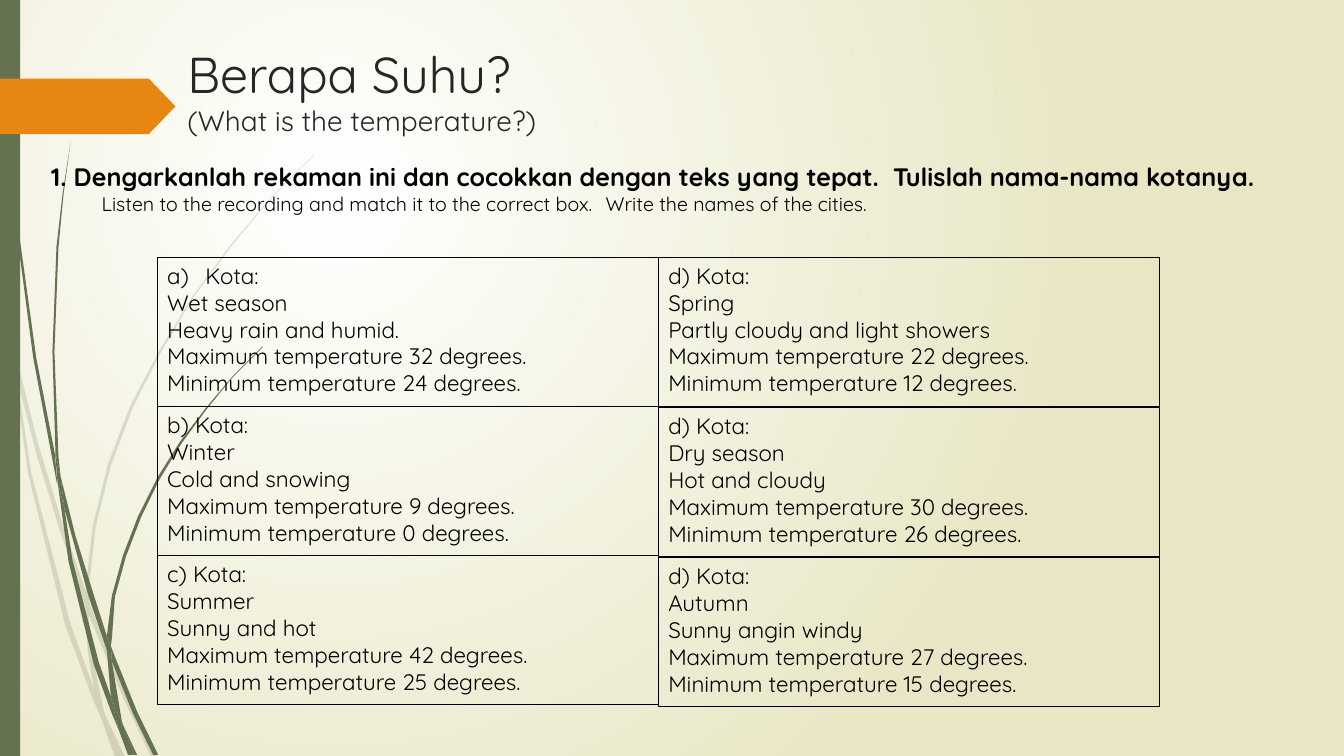
import pptx
import pptx.dml.color
import pptx.enum.shapes
import pptx.enum.text
import pptx.oxml.ns
import pptx.util
from lxml import etree

Inches = pptx.util.Inches
qn = pptx.oxml.ns.qn
SHAPES = pptx.enum.shapes.MSO_SHAPE

HUES = {"green": "647252", "orange": "E78712", "cream": "E8E6C4",
        "white": "FFFFFF", "black": "000000", "title": "262626"}

# Outlines of the pieces of grass
PALE = [
    [(0.11, 3.5), (0.09, 3.22), (0, 2.82), (0, 2.99), (0.1, 3.44)],
    [(0.58, 5.22), (0.84, 5.99), (0.85, 5.86), (0.62, 5.2), (0.36, 4.34), (0.14, 3.45),
     (0.17, 3.76), (0.36, 4.5)],
    [(0.92, 6.07), (0.88, 5.96), (0.88, 6.1), (1.23, 6.94), (1.5, 7.51), (1.55, 7.51),
     (1.27, 6.92)],
    [(1.19, 7.51), (1.24, 7.51), (1.05, 7.11)],
    [(0.93, 6.83), (0.7, 6.19), (0.31, 4.69), (0.17, 3.76), (0.11, 3.5), (0.28, 4.7),
     (0.65, 6.21), (0.92, 6.93), (1.01, 7.14), (0.99, 7.07)],
    [(0.84, 5.99), (0.87, 6.46), (0.93, 6.83), (0.96, 6.92), (1.05, 7.11), (1.03, 7.06),
     (0.91, 6.46), (0.88, 6.1), (0.88, 6.08)],
    [(0.88, 5.84), (0.95, 5.22), (1.1, 4.62), (1.32, 4.04), (1.6, 3.49), (1.92, 2.95),
     (2.29, 2.45), (2.68, 1.98), (2.9, 1.75), (3.12, 1.54), (3.12, 1.53), (2.89, 1.75),
     (2.68, 1.97), (2.28, 2.44), (1.91, 2.94), (1.58, 3.48), (1.29, 4.03), (1.07, 4.61),
     (0.92, 5.22), (0.85, 5.84), (0.85, 5.86), (0.88, 5.96)],
    [(1.01, 7.14), (1.14, 7.51), (1.19, 7.51)],
    [(0.88, 6.08), (0.88, 6.1), (0.88, 5.96), (0.85, 5.86), (0.84, 5.99)],
    [(0.96, 6.92), (0.93, 6.83), (0.99, 7.07), (1.01, 7.14), (1.19, 7.51), (1.05, 7.11)],
]
DARK = [
    [(0.07, 1.1), (0.17, 2.33), (0.33, 3.55), (0.56, 4.77), (0.57, 4.81), (0.55, 4.57),
     (0.55, 4.53), (0.36, 3.55), (0.19, 2.32), (0.08, 1.09), (0.05, 0.48), (0.04, 0),
     (0.03, 0), (0.04, 0.48)],
    [(0.88, 5.92), (1.06, 6.45), (1.06, 6.33), (1.06, 6.31), (0.93, 5.9), (0.75, 5.32),
     (0.6, 4.72), (0.64, 5.05)],
    [(1.13, 6.49), (1.1, 6.41), (1.11, 6.56), (1.32, 7.08), (1.52, 7.49), (1.57, 7.49),
     (1.36, 7.06)],
    [(1.1, 6.91), (0.98, 6.57), (0.72, 5.56), (0.64, 5.05), (0.57, 4.77), (0.68, 5.57),
     (0.93, 6.59), (1.11, 7.08), (1.17, 7.22), (1.16, 7.17)],
    [(0.6, 4.72), (0.58, 4.53), (0.54, 3.49), (0.58, 2.45), (0.63, 1.93), (0.7, 1.41),
     (0.62, 1.93), (0.56, 2.45), (0.52, 3.49), (0.55, 4.49)],
    [(1.33, 7.49), (1.36, 7.49), (1.22, 7.19)],
    [(0.57, 4.77), (0.64, 5.05), (0.6, 4.72), (0.55, 4.49), (0.55, 4.53)],
    [(1.11, 6.33), (1.14, 5.92), (1.25, 5.52), (1.4, 5.13), (1.58, 4.76), (1.8, 4.4),
     (2.05, 4.06), (2.31, 3.74), (2.61, 3.44), (2.6, 3.44), (2.31, 3.73), (2.04, 4.05),
     (1.78, 4.39), (1.56, 4.74), (1.37, 5.12), (1.22, 5.51), (1.11, 5.91), (1.06, 6.31),
     (1.1, 6.41)],
    [(1.17, 7.22), (1.27, 7.49), (1.31, 7.49)],
    [(1.06, 6.45), (1.1, 6.91), (1.16, 7.06), (1.22, 7.19), (1.21, 7.16), (1.11, 6.56),
     (1.09, 6.51)],
    [(1.06, 6.45), (1.09, 6.51), (1.11, 6.56), (1.1, 6.41), (1.06, 6.31)],
    [(1.16, 7.06), (1.1, 6.91), (1.16, 7.17), (1.17, 7.22), (1.3, 7.49), (1.33, 7.49),
     (1.22, 7.19)],
]

# Weather cards: label, season, sky, highest and lowest temperature
LEFT = [("Kota:", "Wet season", "Heavy rain and humid.", 32, 24),
        ("b) Kota:", "Winter", "Cold and snowing", 9, 0),
        ("c) Kota:", "Summer", "Sunny and hot", 42, 25)]
RIGHT = [("d) Kota:", "Spring", "Partly cloudy and light showers", 22, 12),
         ("d) Kota:", "Dry season", "Hot and cloudy", 30, 26),
         ("d) Kota:", "Autumn", "Sunny angin windy", 27, 15)]


def tint(name):
    return pptx.dml.color.RGBColor.from_string(HUES[name])


def add_run(para, text, size, hue="black", bold=False):
    run = para.add_run()
    run.text = text
    look = {"name": "Quicksand", "size": pptx.util.Pt(size), "bold": bold}
    for key, value in look.items():
        setattr(run.font, key, value)
    run.font.color.rgb = tint(hue)


def set_frame(shape):
    look = {"word_wrap": True, "vertical_anchor": pptx.enum.text.MSO_ANCHOR.TOP}
    for key, value in look.items():
        setattr(shape.text_frame, key, value)
    return shape.text_frame


def add_text(slide, x, y, w, h):
    return set_frame(slide.shapes.add_textbox(*map(Inches, (x, y, w, h))))


def paint(shape, hue):
    shape.shadow.inherit = False
    shape.fill.solid()
    shape.fill.fore_color.rgb = tint(hue)
    shape.line.fill.background()


def add_form(slide, kind, x, y, w, h, hue):
    shape = slide.shapes.add_shape(kind, *map(Inches, (x, y, w, h)))
    paint(shape, hue)
    return shape


def add_blade(slide, spots, clear):
    first, *rest = [(Inches(x), Inches(y)) for x, y in spots]
    form = slide.shapes.build_freeform(*first)
    form.add_line_segments(rest, close=True)
    blade = form.convert_to_shape()
    paint(blade, "green")
    if clear:
        color = blade.element.find(".//" + qn("a:srgbClr"))
        etree.SubElement(color, qn("a:alpha"), val="20000")


def add_glow(slide):
    fill = slide.background.fill
    fill.gradient()
    for stop, hue in zip(fill.gradient_stops, ("white", "cream")):
        stop.color.rgb = tint(hue)
    grad = slide.element.find(".//" + qn("a:gradFill"))
    grad.remove(grad.find(qn("a:lin")))
    glow = etree.SubElement(grad, qn("a:path"), {"path": "circle"})
    etree.SubElement(glow, qn("a:fillToRect"), l="50000", t="50000", r="100000", b="100000")


def add_card(slide, x, y, card, letter):
    box = slide.shapes.add_shape(SHAPES.RECTANGLE, *map(Inches, (x, y, 4.97, 1.48)))
    box.shadow.inherit = False
    box.fill.background()
    box.line.color.rgb = tint("black")
    box.line.width = pptx.util.Pt(0.75)
    frame = set_frame(box)
    *lines, high, low = card
    lines += [f"Maximum temperature {high} degrees.", f"Minimum temperature {low} degrees."]
    for row, line in enumerate(lines):
        para = frame.paragraphs[0] if row == 0 else frame.add_paragraph()
        para.alignment = pptx.enum.text.PP_ALIGN.LEFT
        if letter and row == 0:
            props = para._p.get_or_add_pPr()
            props.set("marL", str(Inches(0.38)))
            props.set("indent", str(-Inches(0.38)))
            etree.SubElement(props, qn("a:buFont"), typeface="+mj-lt")
            etree.SubElement(props, qn("a:buAutoNum"), type="alphaLcParenR")
        add_run(para, line, 16)


def main():
    deck = pptx.Presentation()
    deck.slide_width, deck.slide_height = Inches(13.33), Inches(7.5)
    slide = deck.slides.add_slide(deck.slide_layouts[6])

    # Backdrop: glow, grass, side bar and arrow
    add_glow(slide)
    for blades, clear in ((PALE, True), (DARK, False)):
        for spots in blades:
            add_blade(slide, spots, clear)
    add_form(slide, SHAPES.RECTANGLE, 0, 0, 0.2, 7.5, "green")
    arrow = add_form(slide, SHAPES.PENTAGON, 0, 0.78, 1.74, 0.55, "orange")
    arrow.adjustments[0] = 0.48

    # Title
    para = add_text(slide, 1.76, 0.38, 9.75, 1.12).paragraphs[0]
    add_run(para, "Berapa Suhu? ", 36, "title")
    para.add_line_break()
    add_run(para, "(What is the temperature?)", 20, "title")

    # Task, with its translation set under each sentence
    frame = add_text(slide, 0.41, 1.55, 12.44, 0.94)
    add_run(frame.paragraphs[0], "1. Dengarkanlah rekaman ini dan cocokkan dengan teks "
            "yang tepat.  Tulislah nama-nama kotanya.", 18, bold=True)
    para = frame.add_paragraph()
    props = para._p.get_or_add_pPr()
    for key in ("marL", "indent"):
        props.set(key, "0")
    tabs = etree.SubElement(props, qn("a:tabLst"))
    for stop in (0.32, 8.27):
        etree.SubElement(tabs, qn("a:tab"), pos=str(Inches(stop)), algn="l")
    add_run(para, "\tListen to the recording and match it to the correct box.\t"
            "Write the names of the cities.", 14)

    # Weather cards in two columns
    for x, top, pitch, cards in ((1.56, 2.55, 1.48, LEFT), (6.53, 2.55, 1.49, RIGHT)):
        for row, card in enumerate(cards):
            add_card(slide, x, top + row * pitch, card, letter=card[0] == "Kota:")

    deck.save("out.pptx")


if __name__ == "__main__":
    main()
